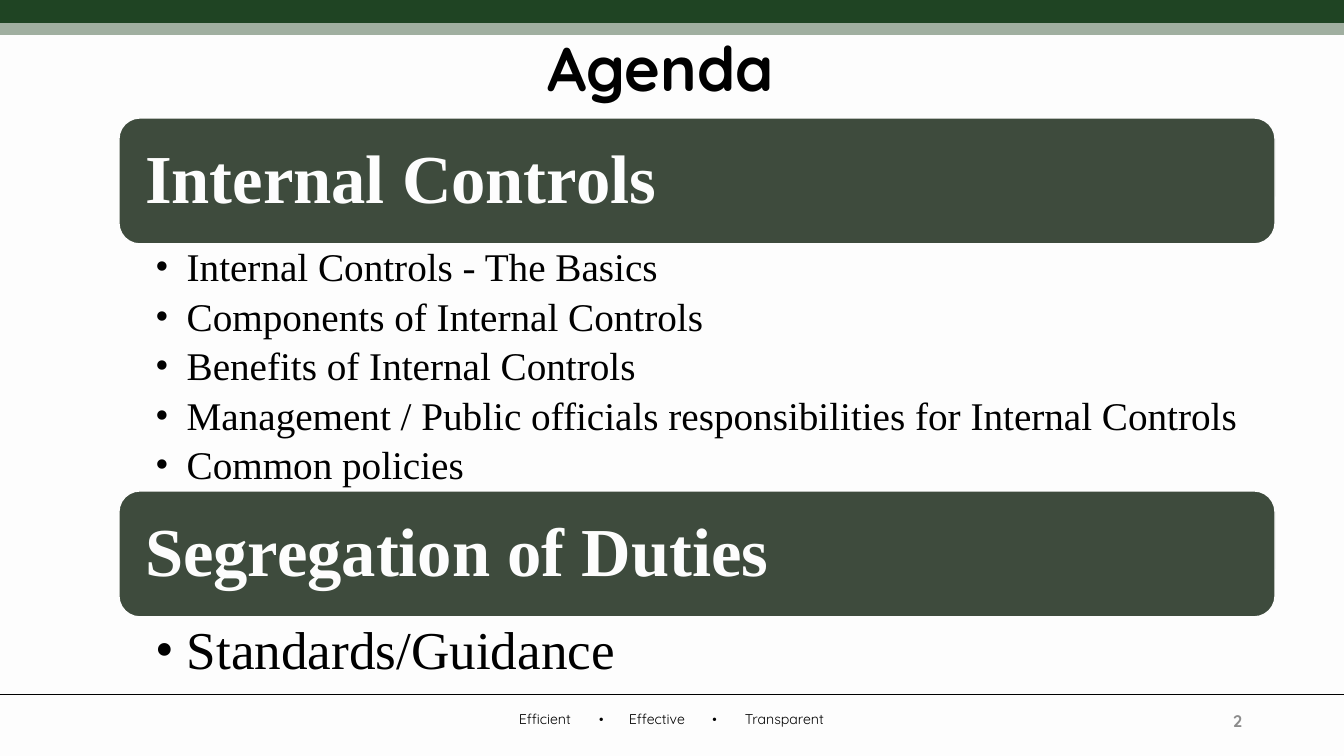
from lxml import etree
from pptx import Presentation
from pptx import util as u
from pptx.dml.color import RGBColor
from pptx.enum import shapes, text
from pptx.oxml.ns import qn

Pt = u.Pt
W, H = 960, 540
COLORS = {"paper": "FDFDFD", "forest": "1F4423", "sage": "A0AFA0",
          "moss": "3E4B3D", "ink": "000000", "grey": "8C8C8C"}
HEAD, BODY = "Quicksand", "Times New Roman"
SECTIONS = [
    (84.24, 175.68, 28, 2.88, ["Internal Controls",
                               "Internal Controls - The Basics",
                               "Components of Internal Controls",
                               "Benefits of Internal Controls",
                               "Management / Public officials responsibilities for Internal Controls",
                               "Common policies"]),
    (350.64, 104.4, 38, 5.04, ["Segregation of Duties", "Standards/Guidance"]),
]


def color(name):
    """Return the named colour."""
    return RGBColor.from_string(COLORS[name])


def style(p, size, font, ink, bold=False):
    """Format every run of a paragraph."""
    for r in p.runs:
        r.font.size, r.font.name, r.font.bold = Pt(size), font, bold
        r.font.color.rgb = color(ink)


def frame(sp, margins, anchor=text.MSO_ANCHOR.TOP):
    """Set up the text frame of a shape and return it."""
    tf = sp.text_frame
    tf.word_wrap = True
    tf.vertical_anchor = anchor
    tf.margin_left, tf.margin_top, tf.margin_right, tf.margin_bottom = map(Pt, margins)
    return tf


def add_box(s, box, margins=(7.2, 3.6, 7.2, 3.6), anchor=text.MSO_ANCHOR.TOP):
    """Add a text box and return its text frame."""
    return frame(s.shapes.add_textbox(*map(Pt, box)), margins, anchor)


def add_rule(s, y, ink, weight):
    """Draw a line across the slide."""
    c = s.shapes.add_connector(shapes.MSO_CONNECTOR.STRAIGHT, 0, Pt(y), Pt(W), Pt(y))
    c.line.color.rgb = color(ink)
    c.line.width = Pt(weight)
    etree.SubElement(c._element.spPr, qn("a:effectLst"))


def add_title(s, box):
    """Place the slide title."""
    p = add_box(s, box, anchor=text.MSO_ANCHOR.MIDDLE).paragraphs[0]
    p.text = "Agenda"
    p.alignment, p.line_spacing = text.PP_ALIGN.CENTER, 0.9
    style(p, 44, HEAD, "ink", True)


def add_section(s, box, size, pad, lines):
    """Place a heading bar with its bulleted list below."""
    x, y, w, h = box
    bar = 90
    sp = s.shapes.add_shape(shapes.MSO_SHAPE.ROUNDED_RECTANGLE, Pt(x), Pt(y), Pt(w), Pt(bar))
    sp.shadow.inherit = False
    sp.fill.solid()
    sp.fill.fore_color.rgb = color("moss")
    sp.line.color.rgb = color("paper")
    sp.line.width = Pt(1)
    p = frame(sp, (14.4, 14.4, 14.4, 14.4), text.MSO_ANCHOR.MIDDLE).paragraphs[0]
    p.text = lines[0]
    p.alignment, p.line_spacing = text.PP_ALIGN.LEFT, 0.9
    style(p, 49, BODY, "paper", True)

    tf = add_box(s, (x, y + bar, w, h), (25.92, pad, 15.84, pad))
    tf.text = "\n".join(lines[1:])
    for p in tf.paragraphs:
        p.alignment, p.line_spacing, p.space_after = text.PP_ALIGN.LEFT, 0.9, Pt(size * 0.18)
        style(p, size, BODY, "ink")
        pPr = p._p.get_or_add_pPr()
        pPr.set("marL", str(Pt(22.5)))
        pPr.set("indent", str(-Pt(22.5)))
        etree.SubElement(pPr, qn("a:buFont"), typeface=BODY)
        etree.SubElement(pPr, qn("a:buChar"), char="•")


def add_footer(s, box):
    """Place the motto and the page number below a thin rule."""
    x, y, w, h = box
    add_rule(s, y, "ink", 0.5)
    p = add_box(s, (x + 370.7, y + 7.8, 240, 19.44), (0, 3.6, 0, 3.6)).paragraphs[0]
    for word in ["Efficient", "\t•", "\tEffective", "\t•", "\tTransparent"]:
        r = p.add_run()
        r.text = word
    style(p, 10.1, HEAD, "ink")
    for r in p.runs[1::2]:
        r.font.name = BODY
    tabs = etree.SubElement(p._p.get_or_add_pPr(), qn("a:tabLst"))
    for stop in (57, 78.5, 138, 161.3):
        etree.SubElement(tabs, qn("a:tab"), pos=str(Pt(stop)), algn="l")

    p = add_box(s, (x + w - 281.76, y + 4.32, 216, 28.8), anchor=text.MSO_ANCHOR.MIDDLE).paragraphs[0]
    p.text = "2"
    p.alignment = text.PP_ALIGN.RIGHT
    style(p, 12, HEAD, "grey", True)


def main():
    """Build the agenda slide."""
    prs = Presentation()
    prs.slide_width, prs.slide_height = Pt(W), Pt(H)
    s = prs.slides.add_slide(prs.slide_layouts[6])
    s.background.fill.solid()
    s.background.fill.fore_color.rgb = color("paper")
    add_rule(s, 7.2, "forest", 18)
    add_rule(s, 20.6, "sage", 9)
    add_footer(s, (0, 496.08, W, H - 496.08))
    add_title(s, (148, 20.16, 648, 62.64))
    for y, h, size, pad, lines in SECTIONS:
        add_section(s, (84.96, y, 825.84, h), size, pad, lines)
    prs.save("out.pptx")


if __name__ == "__main__":
    main()
